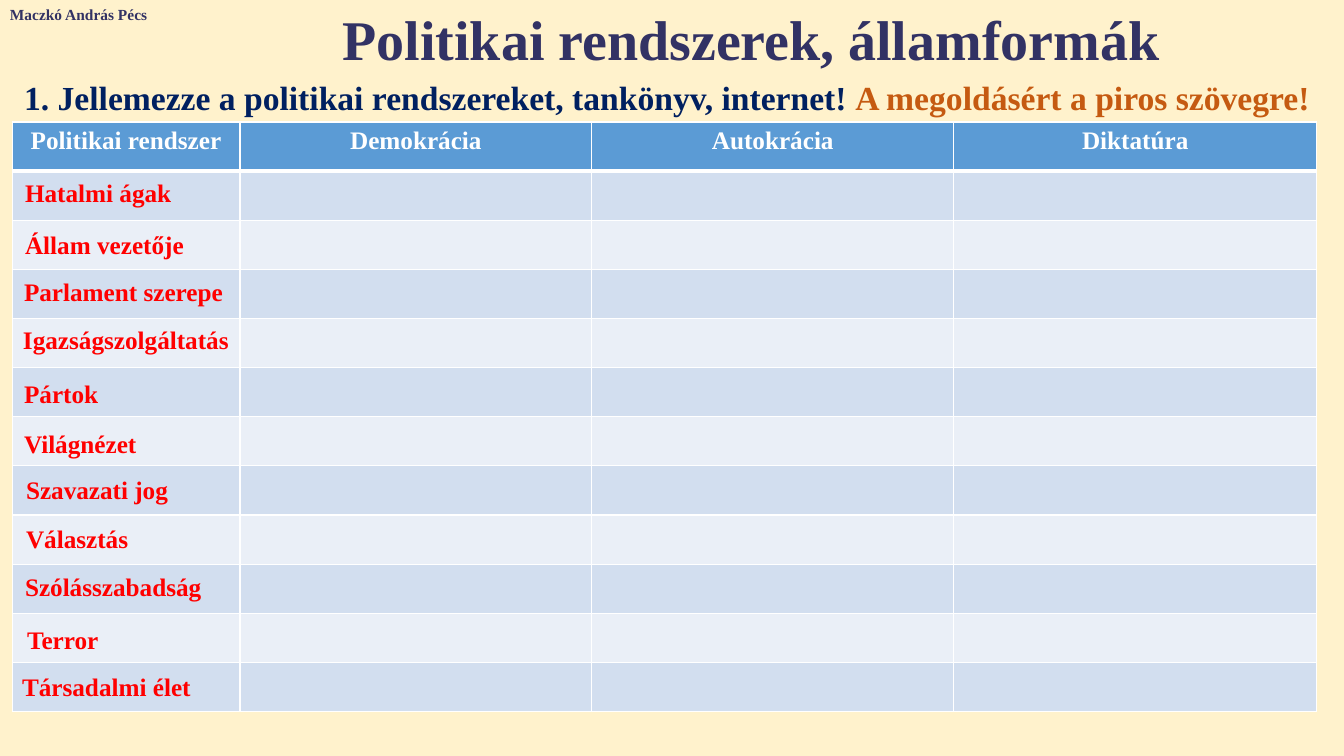
import pptx
import pptx.util
import pptx.dml.color
import pptx.enum.text
import pptx.oxml
import pptx.oxml.ns
import lxml.etree

PX = 9144
FONT = "Times New Roman"
NAVY = "323264"
ALIGN = pptx.enum.text.PP_ALIGN


def color(value):
    return pptx.dml.color.RGBColor.from_string(value)


def write(frame, *parts, size=18, align=ALIGN.LEFT, wrap=True):
    frame.word_wrap = wrap
    paragraph = frame.paragraphs[0]
    paragraph.alignment = align
    for text, text_color in parts:
        run = paragraph.add_run()
        run.text = text
        run.font.name = FONT
        run.font.size = pptx.util.Pt(size)
        run.font.bold = True
        run.font.color.rgb = color(text_color)


presentation = pptx.Presentation()
presentation.slide_width = 1333 * PX
presentation.slide_height = 750 * PX
slide = presentation.slides.add_slide(presentation.slide_layouts[6])
slide.background.fill.solid()
slide.background.fill.fore_color.rgb = color("FFF2CC")

author = slide.shapes.add_textbox(0, 0, 159 * PX, 29 * PX)
write(author.text_frame, ("Maczkó András Pécs", NAVY), size=11)

task = slide.shapes.add_textbox(14 * PX, 71 * PX, 1311 * PX, 50 * PX)
write(
    task.text_frame,
    ("1. Jellemezze a politikai rendszereket, tankönyv, internet! ", "002060"),
    ("A megoldásért a piros szövegre!", "C55A11"),
    size=24,
)

title = slide.shapes.add_textbox(156 * PX, 0, 1178 * PX, 77 * PX)
write(title.text_frame, ("Politikai rendszerek, államformák", NAVY), size=40, align=ALIGN.CENTER)

headings = ["Politikai rendszer", "Demokrácia", "Autokrácia", "Diktatúra"]
column_widths = [226, 349, 359, 360]
row_count = 12
table = slide.shapes.add_table(
    row_count, len(headings), 12 * PX, 121 * PX, sum(column_widths) * PX, 585 * PX
).table
for column, width in zip(table.columns, column_widths):
    column.width = width * PX

for row in range(row_count):
    for column, heading in enumerate(headings):
        cell = table.cell(row, column)
        fill = "5B9BD5" if row == 0 else ("EAEFF7", "D2DEEF")[row % 2]
        if row == 0:
            write(cell.text_frame, (heading, "FFFFFF"), align=ALIGN.CENTER)
        properties = cell._tc.get_or_add_tcPr()
        for side in ("L", "R", "T", "B"):
            thick = (row == 0 and side == "B") or (row == 1 and side == "T")
            line = lxml.etree.SubElement(properties, pptx.oxml.ns.qn(f"a:ln{side}"))
            line.set("w", str(pptx.util.Pt(3 if thick else 1)))
            solid = lxml.etree.SubElement(line, pptx.oxml.ns.qn("a:solidFill"))
            lxml.etree.SubElement(solid, pptx.oxml.ns.qn("a:srgbClr")).set("val", "FFFFFF")
        cell.fill.solid()
        cell.fill.fore_color.rgb = color(fill)

aspects = [
    ("Hatalmi ágak", 15, 171, 167),
    ("Állam vezetője", 15, 223, 179),
    ("Parlament szerepe", 14, 269, 220),
    ("Igazságszolgáltatás", 13, 317, 226),
    ("Pártok", 14, 370, 95),
    ("Világnézet", 14, 420, 133),
    ("Szavazati jog", 16, 466, 163),
    ("Választás", 16, 514, 123),
    ("Szólásszabadság", 15, 562, 197),
    ("Terror", 17, 614, 92),
    ("Társadalmi élet", 12, 661, 189),
]
for aspect, left, top, width in aspects:
    label = slide.shapes.add_textbox(left * PX, top * PX, width * PX, 40 * PX)
    write(label.text_frame, (aspect, "FF0000"), wrap=False)

presentation.save("out.pptx")
